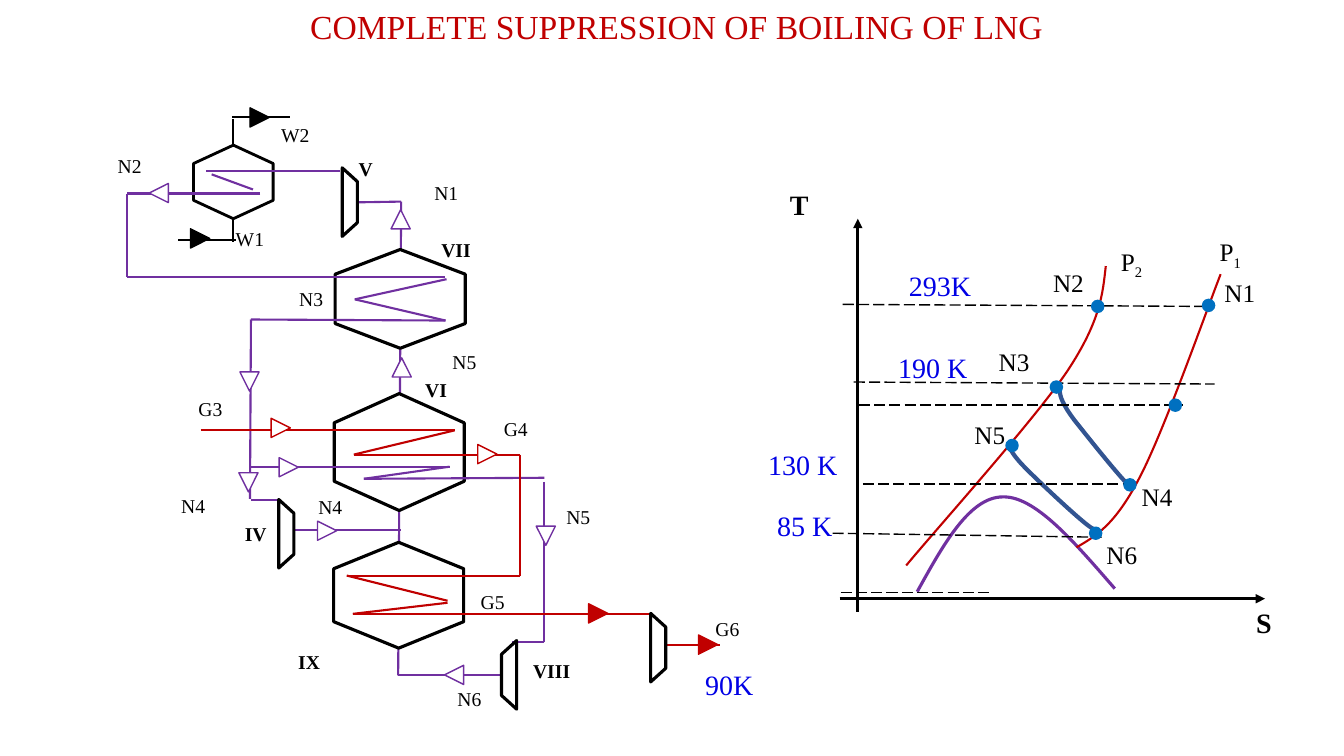
"""Builds the slide on complete suppression of boiling of LNG: flow scheme and T-S diagram."""
from itertools import pairwise

from lxml import etree
from pptx import Presentation
from pptx.dml.color import RGBColor
from pptx.enum.dml import MSO_LINE
from pptx.enum.shapes import MSO_CONNECTOR, MSO_SHAPE
from pptx.enum.text import MSO_AUTO_SIZE, PP_ALIGN
from pptx.oxml.ns import qn
from pptx.util import Inches, Pt

STRAIGHT = MSO_CONNECTOR.STRAIGHT
HEXAGON = MSO_SHAPE.HEXAGON
TRIANGLE = MSO_SHAPE.ISOSCELES_TRIANGLE
TRAPEZOID = MSO_SHAPE.FLOWCHART_MANUAL_OPERATION
OVAL = MSO_SHAPE.OVAL
LONG_DASH = MSO_LINE.LONG_DASH
LEFT, CENTER = PP_ALIGN.LEFT, PP_ALIGN.CENTER
GROW = MSO_AUTO_SIZE.SHAPE_TO_FIT_TEXT

FONT = "Times New Roman"
COLORS = {
    "black": "000000", "white": "FFFFFF", "nitrogen": "7030A0", "gas": "C00000",
    "temperature": "0101E5", "process": "325491", "state": "0070C0",
}
ROTATION = {"up": 0, "right": 90, "down": 180, "left": 270}

TITLE = " COMPLETE SUPPRESSION OF BOILING OF LNG"

SHAFTS = [
    ("black", 1, [(2.31, 2.4), (2.31, 1.18)]),
    ("nitrogen", 1.5, [(3.95, 6.7), (3.98, 2)]),
]
# left, top, width, height, outline
EXCHANGERS = [
    (1.95, 1.41, 0.73, 0.79, 2),
    (3.48, 2.32, 0.98, 1.29, 2.25),
    (3.38, 3.84, 1.16, 1.29, 2.25),
    (3.43, 5.26, 1.05, 1.29, 2.25),
]
PIPES = [
    ("black", 1, [(2.3, 1.16), (2.88, 1.16)]),
    ("black", 1, [(1.77, 2.38), (2.34, 2.38)]),
    ("nitrogen", 1.5, [(3.98, 2), (3.39, 2.01)]),
    ("nitrogen", 1.5, [(3.37, 1.7), (2.04, 1.7)]),
    ("nitrogen", 1.5, [(2.1, 1.73), (2.51, 1.88)]),
    ("nitrogen", 1.5, [(2.58, 1.92), (1.26, 1.92), (1.26, 2.75), (4.41, 2.75)]),
    ("nitrogen", 1.5, [(4.43, 2.77), (3.52, 2.97), (4.42, 3.18), (2.49, 3.17),
                       (2.48, 4.95)]),
    ("nitrogen", 1.5, [(2.49, 4.96), (2.76, 4.96)]),
    ("nitrogen", 1.5, [(2.91, 5.26), (3.98, 5.26)]),
    ("nitrogen", 1.5, [(2.48, 4.63), (4.46, 4.63), (3.61, 4.75), (5.4, 4.74)]),
    ("nitrogen", 1.5, [(5.4, 4.78), (5.4, 6.37), (5.08, 6.37)]),
    ("nitrogen", 1.5, [(5.05, 6.7), (3.95, 6.7)]),
    ("gas", 1.5, [(1.99, 4.27), (4.51, 4.27), (3.51, 4.51), (5.16, 4.51),
                  (5.16, 5.71), (3.44, 5.71), (4.44, 5.96)]),
    ("gas", 1.5, [(4.44, 5.98), (3.5, 6.09), (6.46, 6.09)]),
    ("gas", 1.5, [(6.54, 6.4), (7.14, 6.4)]),
]
# left, top, side of the wide end
MACHINES = [(3.13, 1.93, "left"), (2.5, 5.22, "left"), (6.19, 6.35, "left"),
            (4.71, 6.62, "right")]
# left, top, direction, fill, line
FLOW_MARKS = [
    (2.48, 1.07, "right", "black", "black"),
    (1.89, 2.27, "right", "black", "black"),
    (1.48, 1.82, "left", "white", "nitrogen"),
    (3.88, 2.08, "up", "white", "nitrogen"),
    (3.89, 3.55, "up", "white", "nitrogen"),
    (2.38, 3.69, "down", "white", "nitrogen"),
    (2.37, 4.69, "down", "white", "nitrogen"),
    (5.32, 5.22, "down", "white", "nitrogen"),
    (2.77, 4.54, "right", "white", "nitrogen"),
    (3.15, 5.17, "right", "white", "nitrogen"),
    (4.41, 6.6, "left", "white", "nitrogen"),
    (2.69, 4.15, "right", "white", "gas"),
    (4.74, 4.41, "right", "white", "gas"),
    (5.84, 5.99, "right", "gas", "gas"),
    (6.93, 6.3, "right", "gas", "gas"),
]
# text, left, top, width
STREAMS = [
    ("W2", 2.69, 1.15, 0.82), ("W1", 2.24, 2.19, 0.82), ("N1", 4.21, 1.73, 0.99),
    ("N2", 1.07, 1.46, 0.67), ("N3", 2.87, 2.78, 0.53), ("N4", 1.7, 4.83, 0.67),
    ("N4", 3.06, 4.84, 0.67), ("N5", 4.39, 3.41, 0.67), ("N5", 5.52, 4.94, 0.67),
    ("N6", 4.44, 6.75, 0.67), ("G3", 1.87, 3.87, 0.64), ("G4", 4.9, 4.07, 0.64),
    ("G5", 4.67, 5.79, 0.64), ("G6", 7, 6.06, 0.64),
]
UNITS = [("IV", 2.33, 5.11), ("V", 3.46, 1.49), ("VI", 4.12, 3.68),
         ("VII", 4.28, 2.29), ("VIII", 5.19, 6.47), ("IX", 2.86, 6.38)]
TEMPERATURES = [
    ("293K", 8.24, 2.59, 2.17), ("190 K", 8.52, 3.41, 1.47), ("130 K", 7.23, 4.37, 1.47),
    ("85 K", 7.25, 4.97, 1.47), ("90K", 6.5, 6.55, 1.47),
]

AXES = [[(8.51, 6.07), (8.51, 2.17)], [(8.33, 5.94), (12.55, 5.94)]]
AXIS_NAMES = [("Т", 7.65, 1.81), ("S", 12.26, 5.96)]
ISOTHERMS = [
    [(8.36, 3.02), (11.95, 3.04)], [(8.47, 3.79), (12.05, 3.81)],
    [(8.52, 4.02), (11.74, 4.02)], [(8.56, 4.8), (11.15, 4.8)],
    [(8.26, 5.29), (10.93, 5.33)], [(8.34, 5.88), (9.82, 5.88)],
]
# colour, width, start followed by three control points for each arc
CURVES = [
    ("nitrogen", 2.25, [(9.1, 5.87), (9.36, 5.4), (9.62, 4.93), (9.95, 4.93),
                        (10.27, 4.92), (10.66, 5.38), (11.06, 5.84)]),
    ("gas", 1.5, [(10.97, 2.64), (10.94, 2.91), (10.92, 3.18), (10.59, 3.68),
                  (10.26, 4.17), (9.27, 5.27), (8.99, 5.61)]),
    ("gas", 1.5, [(10.68, 5.43), (10.87, 5.32), (11.06, 5.21), (11.3, 4.75),
                  (11.54, 4.3), (11.97, 3.08), (12.11, 2.72)]),
    ("process", 3, [(10.51, 3.87), (10.52, 3.94), (10.54, 4.01), (10.66, 4.17),
                    (10.78, 4.32), (11.23, 4.89), (11.23, 4.83)]),
    ("process", 3, [(10, 4.39), (10.02, 4.46), (10.05, 4.52), (10.19, 4.66),
                    (10.33, 4.8), (10.86, 5.3), (10.85, 5.24)]),
]
STATES = [(10.83, 2.98), (10.42, 3.78), (11.15, 4.75), (11.93, 2.97),
          (11.6, 3.96), (9.98, 4.36), (10.81, 5.23)]
STATE_NAMES = [("N1", 11.95, 2.7), ("N2", 10.25, 2.6), ("N3", 9.71, 3.39),
               ("N4", 11.13, 4.73), ("N5", 9.47, 4.11), ("N6", 10.78, 5.3)]
ISOBARS = [("Р", "1", 11.92, 2.3), ("Р", "2", 10.94, 2.39)]

prs = Presentation()
prs.slide_width, prs.slide_height = Inches(40 / 3), Inches(7.5)
shapes = prs.slides.add_slide(prs.slide_layouts[6]).shapes


def rgb(name):
    return RGBColor.from_string(COLORS[name])


def add_text(text, left, top, width, height, *, size, color="black", bold=False,
             align=LEFT, subscript="", spaced=False):
    box = shapes.add_textbox(Inches(left), Inches(top), Inches(width), Inches(height))
    frame = box.text_frame
    frame.word_wrap = True
    paragraph = frame.paragraphs[0]
    paragraph.alignment = align
    if spaced:
        paragraph.line_spacing, paragraph.space_after = 1.07, Pt(8)
    else:
        frame.auto_size = GROW
    for part in filter(None, (text, subscript)):
        run = paragraph.add_run()
        run.text = part
        run.font.name, run.font.size, run.font.bold = FONT, Pt(size), bold
        run.font.color.rgb = rgb(color)
    if subscript:
        run.font._element.set("baseline", "-25000")


def add_path(points, color, width, dash=None, arrow=False):
    for start, end in pairwise(points):
        line = shapes.add_connector(STRAIGHT, *map(Inches, start + end))
        line.line.color.rgb, line.line.width = rgb(color), Pt(width)
        if dash:
            line.line.dash_style = dash
        if arrow:
            etree.SubElement(line.line._get_or_add_ln(), qn("a:tailEnd"), type="triangle")
        etree.SubElement(line._element.spPr, qn("a:effectLst"))


def add_solid(kind, left, top, width, height, fill, color, outline, rotation=0):
    solid = shapes.add_shape(kind, *map(Inches, (left, top, width, height)))
    solid.rotation, solid.shadow.inherit = rotation, False
    solid.fill.solid()
    solid.fill.fore_color.rgb = rgb(fill)
    solid.line.color.rgb, solid.line.width = rgb(color), Pt(outline)


def add_curve(controls, color, width):
    track = [(Inches(x), Inches(y)) for x, y in controls]
    builder = shapes.build_freeform(*track[0])
    builder.add_line_segments(track[3::3], close=False)
    curve = builder.convert_to_shape()
    for arc, segment in enumerate(list(curve._element.iter(qn("a:lnTo")))):
        bezier = etree.Element(qn("a:cubicBezTo"))
        for x, y in track[3 * arc + 1:3 * arc + 4]:
            etree.SubElement(bezier, qn("a:pt"), x=str(x - curve.left), y=str(y - curve.top))
        segment.getparent().replace(segment, bezier)
    curve.shadow.inherit = False
    curve.fill.background()
    curve.line.color.rgb, curve.line.width = rgb(color), Pt(width)


add_text(TITLE, 0.46, 0.01, 12.42, 0.5, size=24, color="gas", align=CENTER)

for color, width, points in SHAFTS:
    add_path(points, color, width)
for *frame, outline in EXCHANGERS:
    add_solid(HEXAGON, *frame, "white", "black", outline, 90)
for color, width, points in PIPES:
    add_path(points, color, width)
for left, top, wide_side in MACHINES:
    add_solid(TRAPEZOID, left, top, 0.68, 0.15, "white", "black", 2.25, ROTATION[wide_side])
for left, top, direction, fill, color in FLOW_MARKS:
    add_solid(TRIANGLE, left, top, 0.19, 0.19, fill, color, 1, ROTATION[direction])
for text, left, top, width in STREAMS:
    add_text(text, left, top, width, 0.43, size=14, spaced=True)
for text, left, top in UNITS:
    add_text(text, left, top, 0.82, 0.41, size=14, bold=True, spaced=True)

for points in AXES:
    add_path(points, "black", 2.25, arrow=True)
for color, width, controls in CURVES:
    add_curve(controls, color, width)
for points in ISOTHERMS:
    add_path(points, "black", 1, dash=LONG_DASH)
for left, top in STATES:
    add_solid(OVAL, left, top, 0.12, 0.12, "state", "state", 1)
for text, left, top in AXIS_NAMES:
    add_text(text, left, top, 0.56, 0.44, size=20, bold=True, align=CENTER)
for text, left, top in STATE_NAMES:
    add_text(text, left, top, 0.7, 0.4, size=18, align=CENTER)
for text, index, left, top in ISOBARS:
    add_text(text, left, top, 0.57, 0.4, size=18, align=CENTER, subscript=index)
for text, left, top, width in TEMPERATURES:
    add_text(text, left, top, width, 0.43, size=20, color="temperature", align=CENTER,
             spaced=True)

prs.save("out.pptx")
